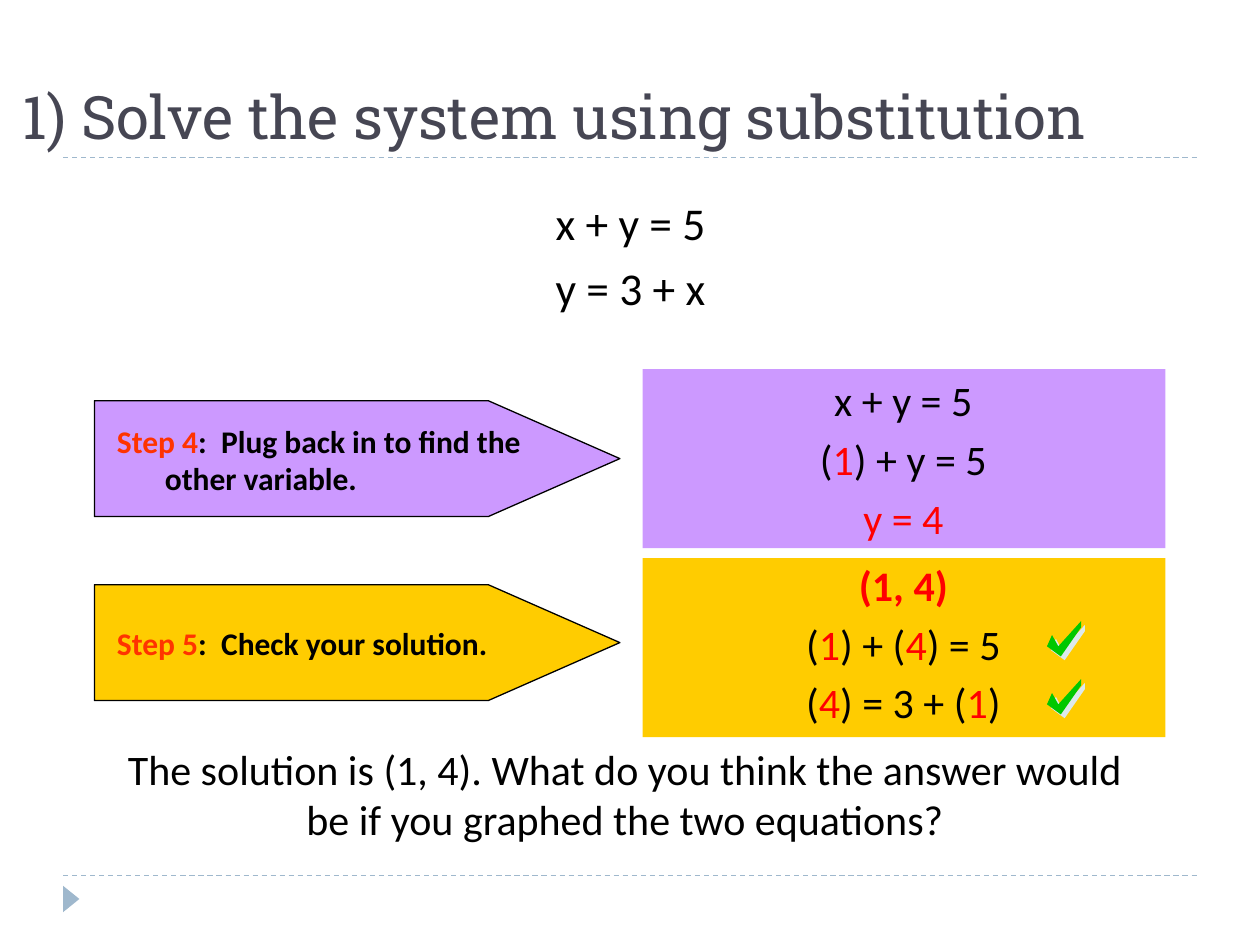
"""Build the slide on checking a system solved by substitution."""
from pptx import Presentation
from pptx.dml.color import RGBColor
from pptx.enum.dml import MSO_LINE
from pptx.enum.shapes import MSO_CONNECTOR, MSO_SHAPE as SHAPE
from pptx.enum.text import MSO_ANCHOR as ANCHOR, PP_ALIGN as ALIGN
from pptx.oxml.ns import qn
from pptx.util import Inches, Pt
from lxml import etree


def paint(part, color):
    if hasattr(part, "solid"):
        part.solid()
        part.fore_color.rgb = RGBColor.from_string(color)
    else:
        part.color.rgb = RGBColor.from_string(color)


def write(area, rows, size, color="000000", accent="FF0000", face="Calibri",
          align=ALIGN.CENTER, anchor=ANCHOR.TOP, hang=0, gap=0, bold=False):
    frame = slide.shapes.add_textbox(*map(Inches, area)).text_frame
    frame.word_wrap = True
    frame.vertical_anchor = anchor
    for i, row in enumerate(rows):
        para = frame.paragraphs[0] if i == 0 else frame.add_paragraph()
        para.alignment = align
        para.space_before = Pt(gap)
        para.font.size = Pt(size)
        para.font.name = face
        para.font.bold = bold
        props = para._p.get_or_add_pPr()
        props.set("marL", str(Inches(hang)))
        props.set("indent", str(-Inches(hang)))
        for j, part in enumerate(row.split("|")):
            if part:
                run = para.add_run()
                run.text = part
                paint(run.font, accent if j % 2 else color)
    return frame


deck = Presentation()
deck.slide_width, deck.slide_height = Inches(10), Inches(7.5)
slide = deck.slides.add_slide(deck.slide_layouts[6])
shapes = slide.shapes

for y in (6.95, 1.25):
    rule = shapes.add_connector(MSO_CONNECTOR.STRAIGHT, Inches(0.5), Inches(y),
                                Inches(9.5), Inches(y))
    paint(rule.line, "9FB8CD")
    rule.line.width = Pt(0.75)
    rule.line.dash_style = MSO_LINE.DASH
    etree.SubElement(rule._element.spPr, qn("a:effectLst"))

mark = shapes.add_shape(SHAPE.ISOSCELES_TRIANGLE, Inches(0.46), Inches(7.07),
                        Inches(0.21), Inches(0.13))
mark.rotation = 90
mark.shadow.inherit = False
paint(mark.fill, "9FB8CD")
mark.line.fill.background()

write((0.08, 0.25, 9.08, 1), ["1) Solve the system using substitution"], 34.2,
      "464653", face="Roboto Slab", align=ALIGN.LEFT, anchor=ANCHOR.BOTTOM)
write((0.67, 1.5, 8.67, 5.08), ["x + y = 5", "y = 3 + x"], 26, hang=0.3, gap=6)

steps = [
    (3.18, 2.93, "CC99FF", "|Step 4|:  Plug back in to find the other variable.",
     (2.93, 1.42), 0.67, ["x + y = 5", "(|1|) + y = 5", "|y = 4"]),
    (4.64, 4.43, "FFCC00", "|Step 5|:  Check your solution.",
     (4.48, 1.25), 0.38, ["|(1, 4)", "(|1|) + (|4|) = 5", "(|4|) = 3 + (|1|)"]),
]
for top, head, color, label, (y, high), hang, work in steps:
    arrow = shapes.add_shape(SHAPE.PENTAGON, Inches(0.75), Inches(top),
                             Inches(4.17), Inches(0.92))
    arrow.adjustments[0] = 1.136
    paint(arrow.line, "000000")
    arrow.line.width = Pt(0.75)
    panel = shapes.add_shape(SHAPE.RECTANGLE, Inches(5.1), Inches(head),
                             Inches(4.15), Inches(1.42))
    panel.line.fill.background()
    for shape in (arrow, panel):
        shape.shadow.inherit = False
        paint(shape.fill, color)
    write((0.83, top + 0.09, 3.58, 0.75), [label], 18, accent="FF3300",
          align=ALIGN.LEFT, anchor=ANCHOR.MIDDLE, hang=0.38, bold=True)
    frame = write((5.17, y, 4, high), work, 24, anchor=ANCHOR.MIDDLE,
                  hang=hang, gap=4.8)
frame.paragraphs[0].font.bold = True

tick = [(0.04, 0.11), (0, 0.2), (0.11, 0.28), (0.27, 0.05), (0.27, 0), (0.09, 0.2)]
for top in (4.93, 5.39):
    for shift, color in ((0.03, "DDE9EC"), (0, "00C800")):
        spots = [(Inches(8.31 + shift + x), Inches(top + shift + y)) for x, y in tick]
        pen = shapes.build_freeform(*spots[0])
        pen.add_line_segments(spots[1:])
        check = pen.convert_to_shape()
        check.shadow.inherit = False
        paint(check.fill, color)
        check.line.fill.background()

write((0.75, 5.85, 8.42, 0.9),
      ["The solution is (1, 4). What do you think the answer would "
       "be if you graphed the two equations?"], 24)

deck.save("out.pptx")
